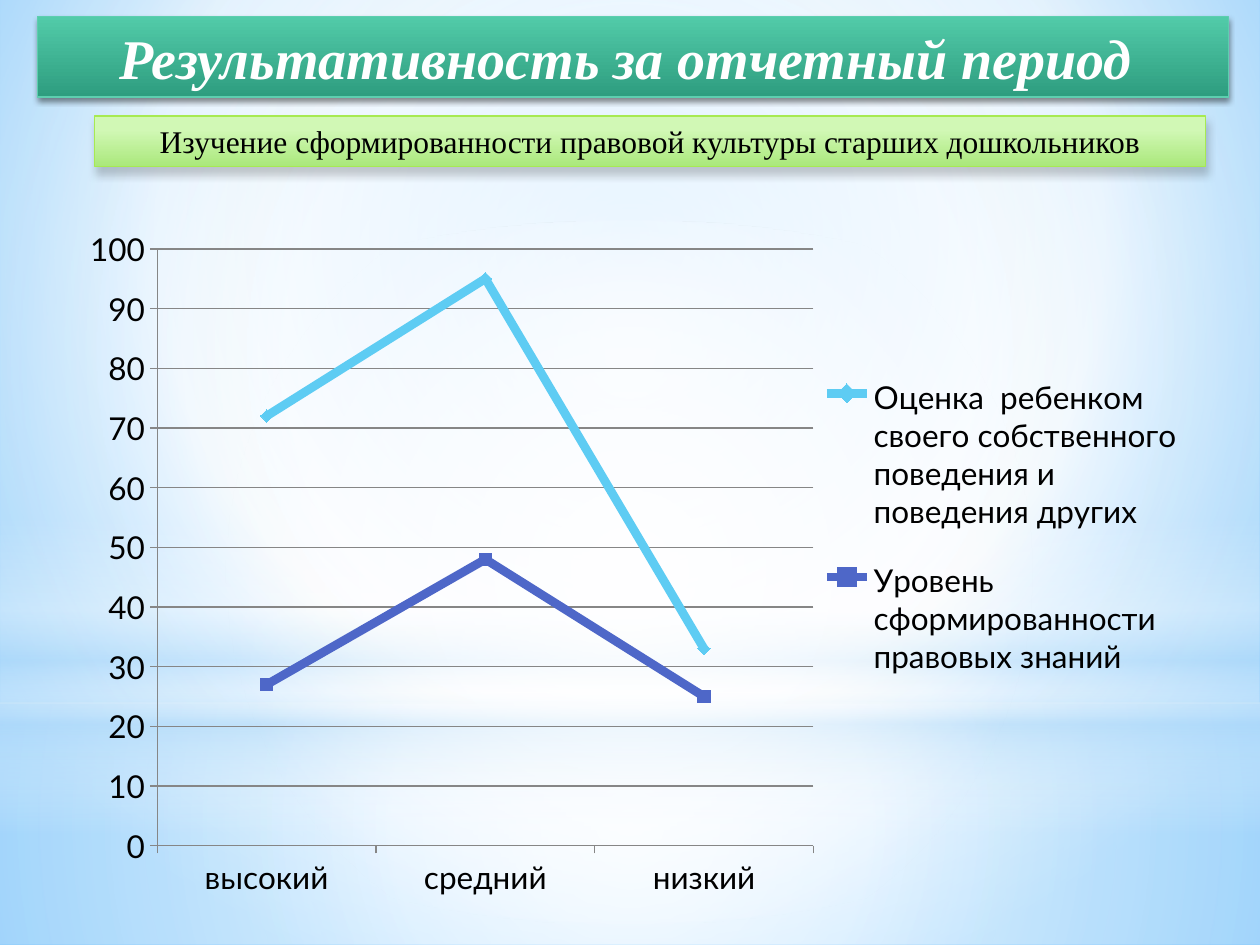
from lxml import etree
from pptx import Presentation
from pptx.chart.data import CategoryChartData
from pptx.dml.color import RGBColor
from pptx.enum.chart import XL_CHART_TYPE, XL_LEGEND_POSITION, XL_MARKER_STYLE, XL_TICK_MARK
from pptx.enum.shapes import MSO_SHAPE
from pptx.enum.text import MSO_ANCHOR, MSO_AUTO_SIZE, PP_ALIGN
from pptx.oxml.ns import qn
from pptx.util import Inches, Pt

RECTANGLE, OVAL = MSO_SHAPE.RECTANGLE, MSO_SHAPE.OVAL
CENTER, MIDDLE = PP_ALIGN.CENTER, MSO_ANCHOR.MIDDLE
FIT_TEXT = MSO_AUTO_SIZE.SHAPE_TO_FIT_TEXT
STACKED_LINES = XL_CHART_TYPE.LINE_MARKERS_STACKED
LEGEND_RIGHT = XL_LEGEND_POSITION.RIGHT
SQUARE, DIAMOND = XL_MARKER_STYLE.SQUARE, XL_MARKER_STYLE.DIAMOND
TICK_OUTSIDE = XL_TICK_MARK.OUTSIDE

WIDTH, HEIGHT = 10, 7.5
CENTRE = (50, 50, 50, 50)
AXIS_GRAY = "868686"
SERIF, SANS = "Times New Roman", "Lato"

WASHES = [
    (RECTANGLE, (0, 5.58, WIDTH, 1.92),
     [(0, "FFFFFF", 91), (37, "FFFFFF", 76), (100, "B4DCFA", 79)], CENTRE),
    (RECTANGLE, (0, 0, WIDTH, 5.58),
     [(0, "FFFFFF", 89), (48, "FFFFFF", 62), (100, "B4DCFA", 79)], CENTRE),
    (RECTANGLE, (0, 4.12, WIDTH, 2.5),
     [(0, "FFFFFF", 0), (29, "FFFFFF", 30), (45, "B4DCFA", 40),
      (55, "FFFFFF", 26), (65, "B4DCFA", 60), (100, "FFFFFF", 0)], None),
    (OVAL, (0, 1.75, WIDTH, 5.58), [(0, "FFFFFF", 100), (56, "FFFFFF", 0)], CENTRE),
]
LEVELS = ["высокий", "средний", "низкий"]
SERIES = [
    ("Уровень сформированности правовых знаний", (27, 48, 25), "4E67C8", SQUARE),
    ("Оценка  ребенком своего собственного поведения и поведения других",
     (45, 47, 8), "5ECCF3", DIAMOND),
]


def color(hex_code):
    """Turn a hex string into a colour."""
    return RGBColor.from_string(hex_code)


def add_child(parent, tag, **attributes):
    """Append an XML element with the given attributes."""
    child = etree.SubElement(parent, qn(tag))
    for name, value in attributes.items():
        child.set(name, str(value))
    return child


def add_color(parent, hex_code, opacity):
    """Append a colour with an opacity in percent."""
    add_child(add_child(parent, "a:srgbClr", val=hex_code), "a:alpha", val=opacity * 1000)


def gradient(stops, focus=None):
    """Build a gradient fill, circular around a focus or running downwards."""
    fill = etree.Element(qn("a:gradFill"), rotWithShape="1")
    stop_list = add_child(fill, "a:gsLst")
    for position, hex_code, opacity in stops:
        add_color(add_child(stop_list, "a:gs", pos=position * 1000), hex_code, opacity)
    if focus:
        circle = add_child(fill, "a:path", path="circle")
        edges = {side: share * 1000 for side, share in zip("ltrb", focus)}
        add_child(circle, "a:fillToRect", **edges)
    else:
        add_child(fill, "a:lin", ang=90 * 60000, scaled=0)
    return fill


def add_gradient_shape(slide, kind, box, stops, focus=None):
    """Add a shape with a gradient fill and no shadow."""
    shape = slide.shapes.add_shape(kind, *map(Inches, box))
    shape.shadow.inherit = False
    shape.element.spPr.find(qn("a:prstGeom")).addnext(gradient(stops, focus))
    return shape


def add_backdrop(slide):
    """Fill the background and lay the translucent washes over it."""
    slide.background.fill.solid()
    properties = slide.element.find(".//" + qn("p:bgPr"))
    stops = [(0, "9ED5FF", 100), (60, "FFFFFF", 100), (100, "5BB9FF", 100)]
    properties.replace(properties[0], gradient(stops, (20, 10, 20, 60)))
    for wash in WASHES:
        add_gradient_shape(slide, *wash).line.fill.background()


def add_banner(slide, box, text, stops, border, shadow, size, ink, emphasis=False):
    """Add a shaded bar with one centred line of text."""
    banner = add_gradient_shape(slide, RECTANGLE, box, stops)
    banner.line.color.rgb = color(border)
    banner.line.width = Pt(0.75)
    opacity, blur, distance = shadow
    effects = banner.element.spPr.find(qn("a:effectLst"))
    outer = add_child(effects, "a:outerShdw", blurRad=Pt(blur), dist=Pt(distance),
                      dir=90 * 60000, rotWithShape=0)
    add_color(outer, "000000", opacity)
    frame = banner.text_frame
    frame.word_wrap = True
    frame.auto_size = FIT_TEXT
    frame.vertical_anchor = MIDDLE
    paragraph = frame.paragraphs[0]
    paragraph.alignment = CENTER
    run = paragraph.add_run()
    run.text = text
    run.font.name, run.font.size = SERIF, Pt(size)
    run.font.bold = run.font.italic = emphasis
    run.font.color.rgb = color(ink)


def manual_layout(box, inner=False):
    """Build a chart layout from shares of the chart area."""
    layout = etree.Element(qn("c:layout"))
    manual = add_child(layout, "c:manualLayout")
    if inner:
        add_child(manual, "c:layoutTarget", val="inner")
    for tag in ("c:xMode", "c:yMode"):
        add_child(manual, tag, val="edge")
    for tag, share in zip(("c:x", "c:y", "c:w", "c:h"), box):
        add_child(manual, tag, val=share)
    return layout


def place_chart_parts(chart):
    """Fix the places of the plot area and the legend."""
    plot_area = chart.element.find(".//" + qn("c:plotArea"))
    legend = chart.element.find(".//" + qn("c:legend"))
    for part in (plot_area, legend):
        for layout in part.findall(qn("c:layout")):
            part.remove(layout)
    plot_area.insert(0, manual_layout((0.08, 0.05, 0.58, 0.86), inner=True))
    legend.find(qn("c:legendPos")).addnext(manual_layout((0.68, 0.19, 0.31, 0.52)))


def add_level_chart(slide, box):
    """Add the stacked line chart of the levels."""
    data = CategoryChartData()
    data.categories = LEVELS
    for name, values, _, _ in SERIES:
        data.add_series(name, values)
    chart = slide.shapes.add_chart(STACKED_LINES, *map(Inches, box), data).chart
    chart.has_title = False
    chart.font.name, chart.font.size = SANS, Pt(18)
    chart.font.color.rgb = color("000000")
    chart.has_legend = True
    chart.legend.position = LEGEND_RIGHT
    chart.legend.include_in_layout = False
    for line, (_, _, hex_code, marker) in zip(chart.plots[0].series, SERIES):
        line.smooth = False
        line.format.line.width = Pt(5)
        line.format.line.color.rgb = color(hex_code)
        line.marker.style, line.marker.size = marker, 7
        line.marker.format.fill.solid()
        line.marker.format.fill.fore_color.rgb = color(hex_code)
        line.marker.format.line.color.rgb = color(hex_code)
    levels, scores = chart.category_axis, chart.value_axis
    scores.minimum_scale, scores.maximum_scale, scores.major_unit = 0, 100, 10
    scores.has_major_gridlines = True
    for axis in (levels, scores):
        axis.major_tick_mark = TICK_OUTSIDE
    for part in (levels, scores, scores.major_gridlines):
        part.format.line.color.rgb = color(AXIS_GRAY)
        part.format.line.width = Pt(0.75)
    place_chart_parts(chart)


def main():
    """Build the slide and save it."""
    deck = Presentation()
    deck.slide_width, deck.slide_height = Inches(WIDTH), Inches(HEIGHT)
    slide = deck.slides.add_slide(deck.slide_layouts[6])
    add_backdrop(slide)
    add_level_chart(slide, (0.53, 1.7, 8.98, 5.51))
    add_banner(slide, (0.3, 0.13, 9.45, 0.64), "Результативность за отчетный период ",
               [(0, "52CBA9", 100), (100, "2E9D7F", 100)], "5DCEAF",
               (45, 3.1, 1.8), 32, "FFFFFF", emphasis=True)
    add_banner(slide, (0.75, 0.92, 8.82, 0.4),
               "Изучение сформированности правовой культуры старших дошкольников",
               [(28, "D1F8B5", 100), (100, "AAE87B", 100)], "A7EA52",
               (20, 5, 4), 18, "000000")
    deck.save("out.pptx")


if __name__ == "__main__":
    main()
